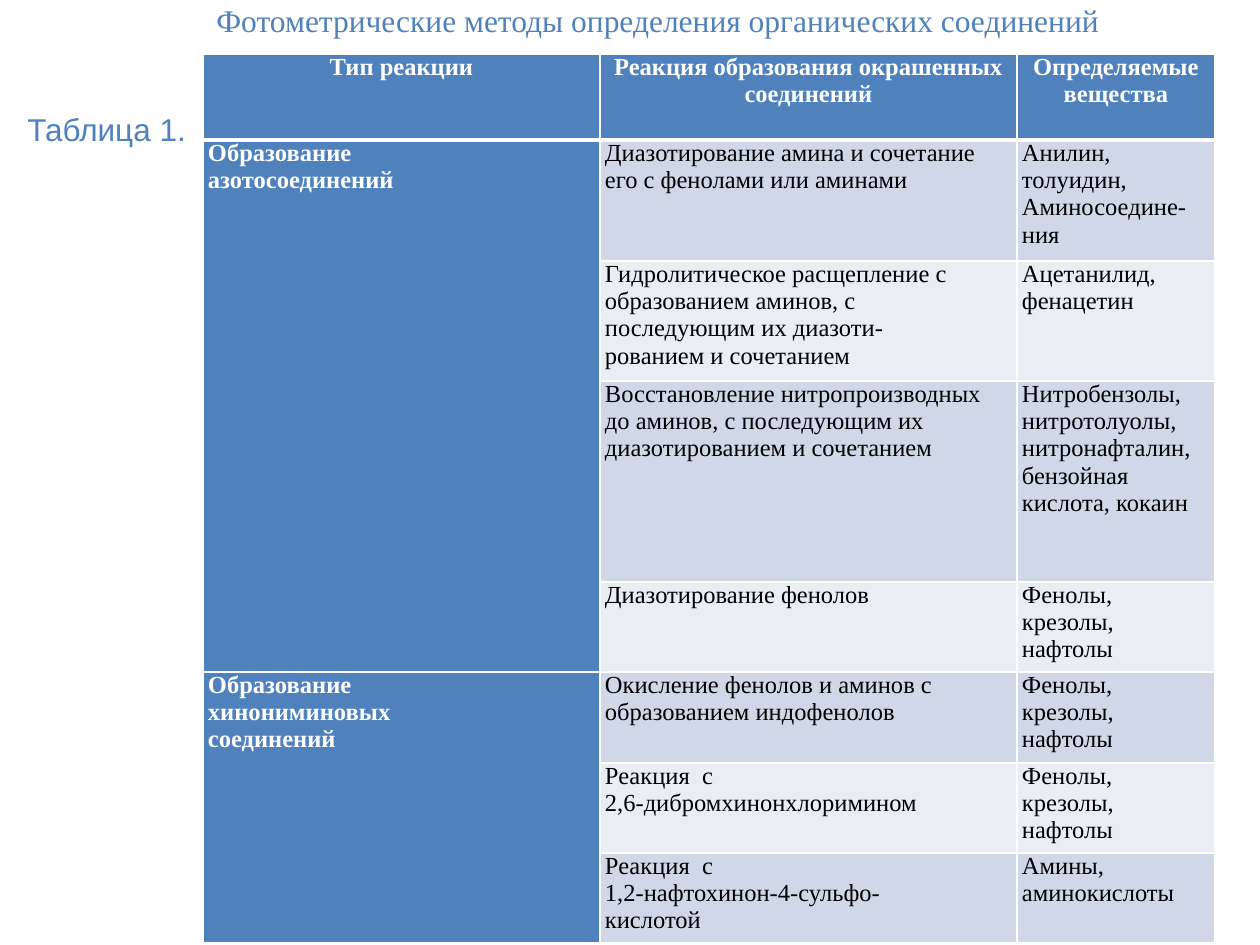
from dataclasses import dataclass
from typing import Any

import lxml.etree
import pptx
import pptx.dml.color
import pptx.enum.text
import pptx.oxml.ns
import pptx.util

EMU_PER_PX = 914400 / 126


@dataclass(frozen=True)
class Theme:
    accent: str = "4F81BD"
    odd_band: str = "D0D8E8"
    even_band: str = "E9EDF4"
    white: str = "FFFFFF"
    black: str = "000000"
    serif: str = "Times New Roman"
    sans: str = "Arial"
    title_size: int = 18
    table_size: int = 14
    thin_border: int = 1
    header_border: int = 3


@dataclass(frozen=True)
class Reaction:
    description: str
    substances: str


@dataclass(frozen=True)
class ReactionGroup:
    name: str
    reactions: tuple[Reaction, ...]


THEME = Theme()
TITLE = "Фотометрические методы определения органических соединений"
LABEL = "Таблица 1."
HEADERS = (
    "Тип реакции",
    "Реакция образования окрашенных\nсоединений",
    "Определяемые\nвещества",
)
PHENOLS = "Фенолы,\nкрезолы,\nнафтолы"
GROUPS = (
    ReactionGroup("Образование\nазотосоединений", (
        Reaction("Диазотирование амина и сочетание\nего с фенолами или аминами",
                 "Анилин,\nтолуидин,\nАминосоедине-\nния"),
        Reaction("Гидролитическое расщепление с\nобразованием аминов, с\n"
                 "последующим их диазоти-\nрованием и сочетанием",
                 "Ацетанилид,\nфенацетин"),
        Reaction("Восстановление нитропроизводных\nдо аминов, с последующим их\n"
                 "диазотированием и сочетанием",
                 "Нитробензолы,\nнитротолуолы,\nнитронафталин,\nбензойная\nкислота, кокаин"),
        Reaction("Диазотирование фенолов", PHENOLS),
    )),
    ReactionGroup("Образование\nхинониминовых\nсоединений", (
        Reaction("Окисление фенолов и аминов с\nобразованием индофенолов", PHENOLS),
        Reaction("Реакция  с\n2,6-дибромхинонхлоримином", PHENOLS),
        Reaction("Реакция  с\n1,2-нафтохинон-4-сульфо-\nкислотой", "Амины,\nаминокислоты"),
    )),
)
COLUMN_WIDTHS = (397, 417, 198)
ROW_HEIGHTS = (86, 121, 120, 201, 90, 91, 90, 90)


def px(length: int) -> pptx.util.Emu:
    return pptx.util.Emu(round(length * EMU_PER_PX))


def set_attributes(target: Any, values: dict[str, Any]) -> None:
    for name, value in values.items():
        setattr(target, name, value)


def format_font(font: Any, name: str, size: int, color: str, bold: bool = False) -> None:
    set_attributes(font, {"name": name, "size": pptx.util.Pt(size), "bold": bold})
    font.color.rgb = pptx.dml.color.RGBColor.from_string(color)


def draw_borders(cell: Any, widths: dict[str, int]) -> None:
    properties = cell._tc.get_or_add_tcPr()
    for side, width in widths.items():
        line = lxml.etree.SubElement(
            properties, pptx.oxml.ns.qn(f"a:ln{side}"), w=str(pptx.util.Pt(width)))
        fill = lxml.etree.SubElement(line, pptx.oxml.ns.qn("a:solidFill"))
        lxml.etree.SubElement(fill, pptx.oxml.ns.qn("a:srgbClr"), val=THEME.white)


def fill_cell(table: Any, row: int, column: int, text: str) -> None:
    cell = table.cell(row, column)
    is_header = row == 0
    is_accent = is_header or column == 0
    draw_borders(cell, {
        "L": THEME.thin_border,
        "R": THEME.thin_border,
        "T": THEME.header_border if row == 1 else THEME.thin_border,
        "B": THEME.header_border if is_header else THEME.thin_border,
    })
    band = THEME.odd_band if row % 2 else THEME.even_band
    cell.fill.solid()
    cell.fill.fore_color.rgb = pptx.dml.color.RGBColor.from_string(
        THEME.accent if is_accent else band)
    set_attributes(cell, {
        "margin_left": px(5), "margin_right": px(5), "margin_top": 0, "margin_bottom": 0,
        "vertical_anchor": pptx.enum.text.MSO_ANCHOR.TOP,
    })
    cell.text_frame.text = text
    alignment = pptx.enum.text.PP_ALIGN.CENTER if is_header else pptx.enum.text.PP_ALIGN.LEFT
    for paragraph in cell.text_frame.paragraphs:
        paragraph.alignment = alignment
        for run in paragraph.runs:
            format_font(run.font, THEME.serif, THEME.table_size,
                        THEME.white if is_accent else THEME.black, is_accent)


def draw_table(slide: Any) -> None:
    table = slide.shapes.add_table(
        len(ROW_HEIGHTS), len(COLUMN_WIDTHS), px(203), px(54),
        px(sum(COLUMN_WIDTHS)), px(sum(ROW_HEIGHTS))).table
    table.horz_banding = False
    for column, width in zip(table.columns, COLUMN_WIDTHS):
        column.width = px(width)
    for row, height in zip(table.rows, ROW_HEIGHTS):
        row.height = px(height)
    for column, header in enumerate(HEADERS):
        fill_cell(table, 0, column, header)
    row = 1
    for group in GROUPS:
        first_row = row
        for reaction in group.reactions:
            name = group.name if row == first_row else ""
            for column, text in enumerate((name, reaction.description, reaction.substances)):
                fill_cell(table, row, column, text)
            row += 1
        table.cell(first_row, 0).merge(table.cell(row - 1, 0))


def draw_heading(slide: Any) -> None:
    text_frame = slide.shapes.add_textbox(px(15), px(-8), px(1230), px(165)).text_frame
    set_attributes(text_frame, {
        "word_wrap": True, "vertical_anchor": pptx.enum.text.MSO_ANCHOR.MIDDLE})
    text_frame.text = f"{TITLE}\n{LABEL}"
    title, label = text_frame.paragraphs
    title._p.get_or_add_pPr().set("marL", str(px(189)))
    label.space_before = pptx.util.Pt(41)
    for paragraph, font_name in ((title, THEME.serif), (label, THEME.sans)):
        format_font(paragraph.runs[0].font, font_name, THEME.title_size, THEME.accent)


def main() -> None:
    presentation = pptx.Presentation()
    set_attributes(presentation, {"slide_width": px(1260), "slide_height": px(945)})
    slide = presentation.slides.add_slide(presentation.slide_layouts[6])
    draw_table(slide)
    draw_heading(slide)
    presentation.save("out.pptx")


if __name__ == "__main__":
    main()
